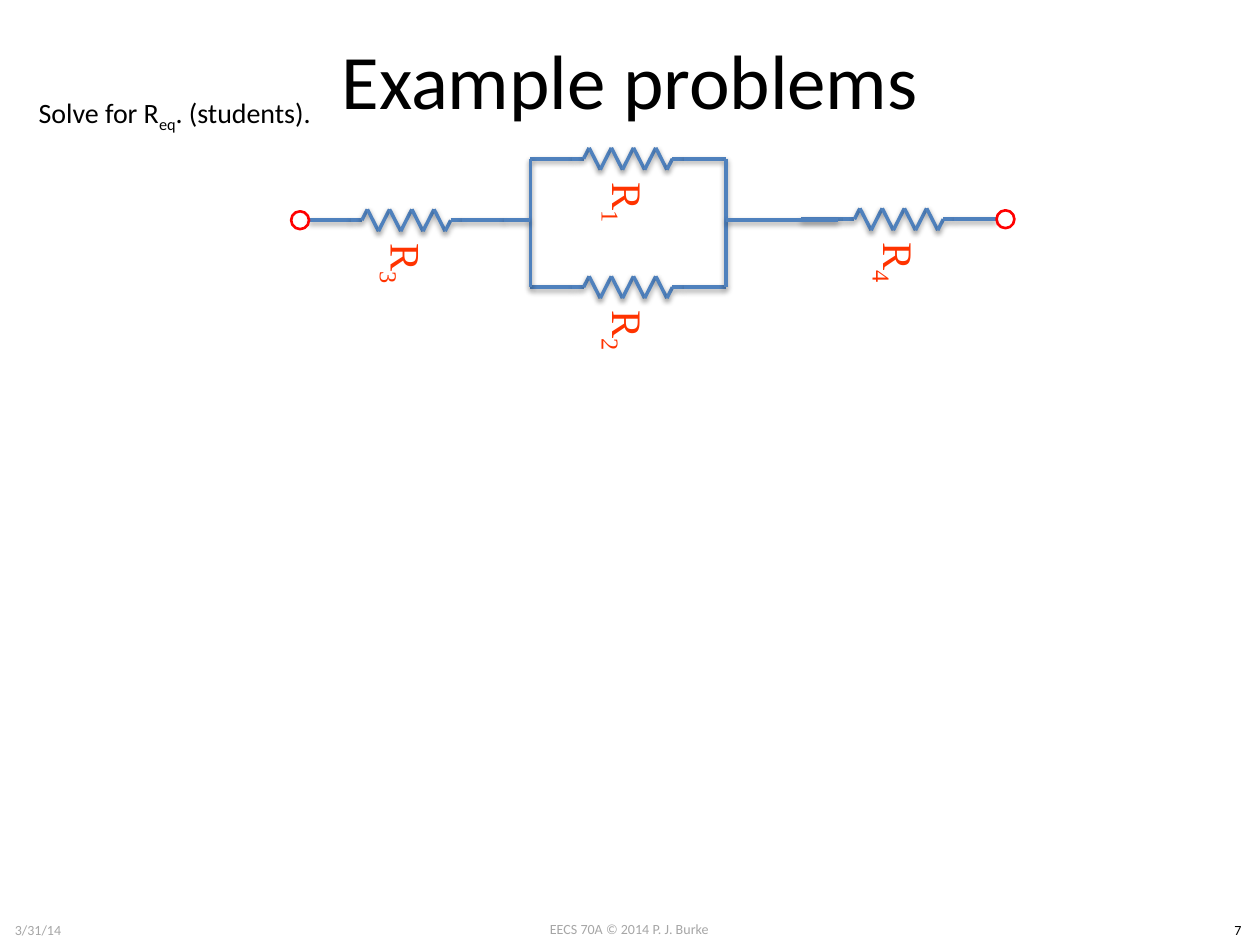
from itertools import pairwise
from pptx import Presentation
from pptx.dml.color import RGBColor
from pptx.enum.shapes import MSO_CONNECTOR, MSO_SHAPE
from pptx.enum.text import MSO_ANCHOR, PP_ALIGN
from pptx.util import Cm, Pt

COLORS = {"text": "000000", "muted": "A6A6A6", "label": "FF3300", "wire": "4F81BD", "terminal": "FF0000"}
TITLE = "Example problems"
TASK = [("Solve for R", False), ("eq", True), (". (students).", False)]
FOOTER = "EECS 70A © 2014 P. J. Burke"
PAGE = "7"
DATE = "3/31/14"

LEFT_NODE, RIGHT_NODE = 10.69, 14.63
TOP_ROW, MIDDLE_ROW, BOTTOM_ROW = 3.2, 4.44, 5.79
RESISTORS = [
    ("1", LEFT_NODE, TOP_ROW),
    ("2", LEFT_NODE, BOTTOM_ROW),
    ("3", 6.22, MIDDLE_ROW),
    ("4", 16.15, 4.42),
]
WIRES = [
    ((LEFT_NODE, TOP_ROW), (LEFT_NODE, BOTTOM_ROW)),
    ((RIGHT_NODE, TOP_ROW), (RIGHT_NODE, BOTTOM_ROW)),
    ((RIGHT_NODE, MIDDLE_ROW), (16.89, MIDDLE_ROW)),
    ((10.16, MIDDLE_ROW), (LEFT_NODE, MIDDLE_ROW)),
]
TERMINALS = [(6.05, MIDDLE_ROW), (20.27, 4.42)]
LEAD, ZIGZAG, AMPLITUDE = 0.85, 2.24, 0.22
TERMINAL_SIZE = 0.36


def color(name):
    return RGBColor.from_string(COLORS[name])


def write(shape, runs, *, size, fill="text", font="Calibri", align=PP_ALIGN.LEFT,
          anchor=MSO_ANCHOR.TOP, wrap=True):
    frame = shape.text_frame
    frame.word_wrap = wrap
    frame.vertical_anchor = anchor
    paragraph = frame.paragraphs[0]
    paragraph.alignment = align
    for text, subscript in runs:
        run = paragraph.add_run()
        run.text = text
        run.font.size = Pt(size)
        run.font.name = font
        run.font.color.rgb = color(fill)
        if subscript:
            run.font._element.set("baseline", "-25000")


def add_text(shapes, box, runs, **style):
    shape = shapes.add_textbox(*map(Cm, box))
    write(shape, runs, **style)
    return shape


def add_wire(shapes, start, end):
    wire = shapes.add_connector(MSO_CONNECTOR.STRAIGHT, *map(Cm, start + end))
    wire.line.color.rgb = color("wire")
    wire.line.width = Pt(2)


def add_resistor(slide, number, left, middle):
    shapes = slide.shapes.add_group_shape().shapes
    label = add_text(shapes, (left + 0.41, middle - 0.05, 3.02, 1.85), [("R", False), (number, True)],
                     size=24, fill="label", font="Times New Roman",
                     align=PP_ALIGN.CENTER, anchor=MSO_ANCHOR.MIDDLE)
    label.rotation = 90
    step = ZIGZAG / 20
    start = left + LEAD
    peaks = [(start + k * step, middle + (AMPLITUDE if k % 4 == 1 else -AMPLITUDE)) for k in range(3, 18, 2)]
    points = [(left, middle), (start, middle), (start + 2 * step, middle), *peaks,
              (start + 18 * step, middle), (start + ZIGZAG, middle), (start + ZIGZAG + LEAD, middle)]
    for begin, end in pairwise(points):
        add_wire(shapes, begin, end)


def add_terminal(slide, center, middle):
    half = TERMINAL_SIZE / 2
    circle = slide.shapes.add_shape(MSO_SHAPE.OVAL, Cm(center - half), Cm(middle - half),
                                    Cm(TERMINAL_SIZE), Cm(TERMINAL_SIZE))
    circle.shadow.inherit = False
    circle.fill.background()
    circle.line.color.rgb = color("terminal")
    circle.line.width = Pt(1.5)


def main():
    presentation = Presentation()
    presentation.slide_width, presentation.slide_height = Cm(25.4), Cm(19.05)
    slide = presentation.slides.add_slide(presentation.slide_layouts[5])

    title = slide.shapes.title
    title.left, title.top, title.width, title.height = map(Cm, (1.27, 0, 22.86, 3.18))
    write(title, [(TITLE, False)], size=44, align=PP_ALIGN.CENTER, anchor=MSO_ANCHOR.MIDDLE)

    for resistor in RESISTORS:
        add_resistor(slide, *resistor)
    for start, end in WIRES:
        add_wire(slide.shapes, start, end)
    for terminal in TERMINALS:
        add_terminal(slide, *terminal)

    add_text(slide.shapes, (0.53, 1.8, 6.12, 0.94), TASK, size=16, wrap=False)
    add_text(slide.shapes, (9.73, 18.44, 5.92, 0.6), [(FOOTER, False)],
             size=8, fill="muted", align=PP_ALIGN.CENTER)
    add_text(slide.shapes, (24.51, 18.46, 0.89, 0.6), [(PAGE, False)], size=8, align=PP_ALIGN.CENTER)
    add_text(slide.shapes, (0.05, 18.46, 5.26, 0.58), [(DATE, False)],
             size=8, fill="muted", anchor=MSO_ANCHOR.MIDDLE)
    presentation.save("out.pptx")


if __name__ == "__main__":
    main()
